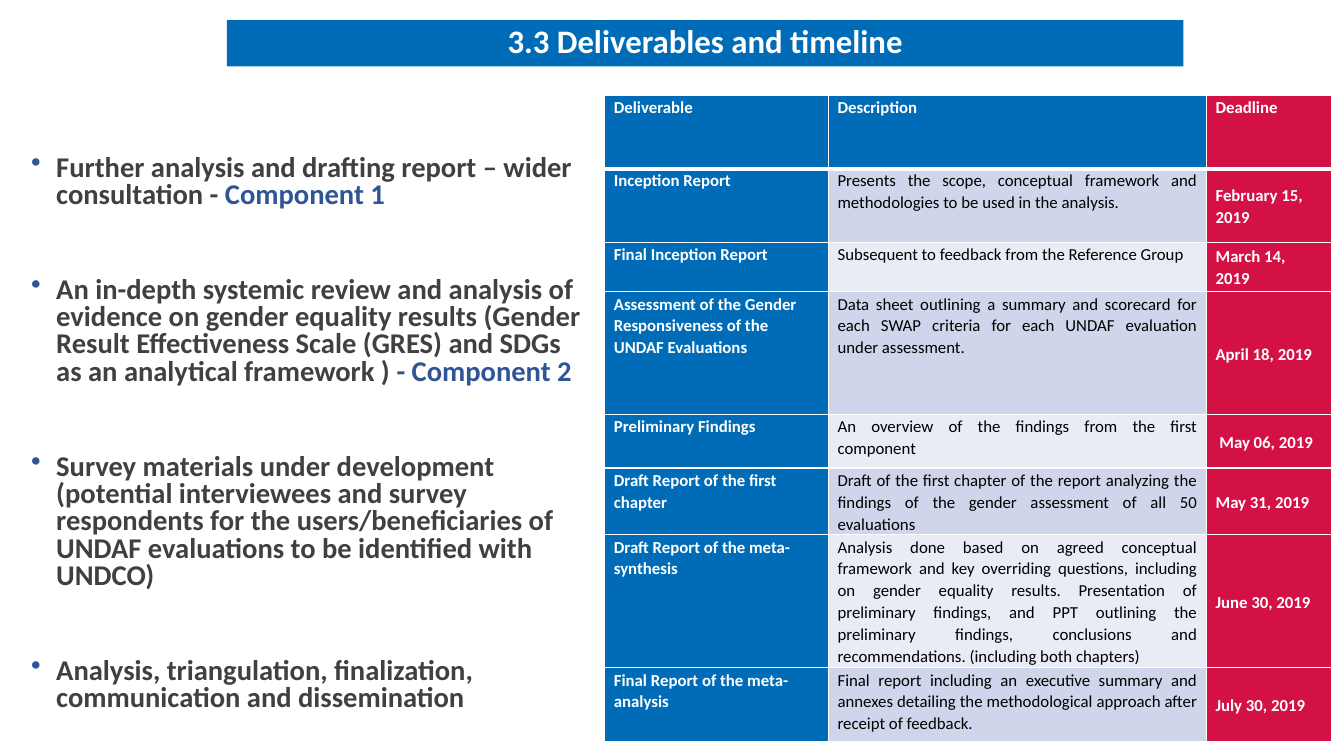
"""Build the deliverables and timeline slide."""
from dataclasses import dataclass

from lxml import etree
from pptx import Presentation
from pptx import util as u
from pptx.dml.color import RGBColor
from pptx.enum import shapes, text
from pptx.oxml import ns

FONT = "Calibri"
COLORS = {
    "blue": "006CB7", "red": "D31145", "accent": "2F5597", "gray": "404040",
    "white": "FFFFFF", "black": "000000", "band_dark": "CFD5EA", "band_light": "E9EBF5",
}
COL_WIDTHS = (159.8, 270, 89.3)


@dataclass
class Deliverable:
    name: str
    description: str
    deadline: str
    height: float


@dataclass
class Step:
    label: str
    component: str = ""


HEADER = Deliverable("Deliverable", "Description", "Deadline", 52.6)
DELIVERABLES = [
    Deliverable("Inception Report",
                "Presents the scope, conceptual framework and methodologies to be used in the analysis.",
                "February 15, 2019", 52.6),
    Deliverable("Final Inception Report", "Subsequent to feedback from the Reference Group",
                "March 14, 2019", 35.3),
    Deliverable("Assessment of the Gender Responsiveness of the UNDAF Evaluations",
                "Data sheet outlining a summary and scorecard for each SWAP criteria for each "
                "UNDAF evaluation under assessment.",
                "April 18, 2019", 87.8),
    Deliverable("Preliminary Findings", "An overview of the findings from the first component",
                " May 06, 2019", 38.2),
    Deliverable("Draft Report of the first chapter",
                "Draft of the first chapter of the report analyzing the findings of the gender "
                "assessment of all 50 evaluations",
                "May 31, 2019", 47.5),
    Deliverable("Draft Report of the meta-synthesis",
                "Analysis done based on agreed conceptual framework and key overriding questions, "
                "including on gender equality results. Presentation of preliminary findings, and PPT "
                "outlining the preliminary findings, conclusions and recommendations. "
                "(including both chapters)",
                "June 30, 2019", 95),
    Deliverable("Final Report of the meta-analysis",
                "Final report including an executive summary and annexes detailing the "
                "methodological approach after receipt of feedback.",
                "July 30, 2019", 52.6),
]
STEPS = [
    Step("Further analysis and drafting report – wider consultation - ", "Component 1"),
    Step("An in-depth systemic review and analysis of evidence on gender equality results "
         "(Gender Result Effectiveness Scale (GRES) and SDGs as an analytical framework ) ",
         "- Component 2"),
    Step("Survey materials under development (potential interviewees and survey respondents for "
         "the users/beneficiaries of UNDAF evaluations to be identified with UNDCO)"),
    Step("Analysis, triangulation, finalization, communication and dissemination"),
]


def rgb(name: str) -> RGBColor:
    return RGBColor.from_string(COLORS[name])


def add_text(p, content: str, *, size: float, color: str = "white", bold: bool = True,
             align=None, spacing: float = 1.0) -> None:
    p.alignment, p.line_spacing = align, spacing
    r = p.add_run()
    r.text = content
    r.font.name, r.font.size, r.font.bold = FONT, u.Pt(size), bold
    r.font.color.rgb = rgb(color)


def set_borders(cell, top: float, bottom: float) -> None:
    tcPr = cell._tc.get_or_add_tcPr()
    for i, (side, width) in enumerate((("L", 1), ("R", 1), ("T", top), ("B", bottom))):
        ln = etree.Element(ns.qn(f"a:ln{side}"), w=str(int(u.Pt(width))))
        fill = etree.SubElement(ln, ns.qn("a:solidFill"))
        etree.SubElement(fill, ns.qn("a:srgbClr"), val=COLORS["white"])
        tcPr.insert(i, ln)


def set_bullet(p) -> None:
    pPr = p._p.get_or_add_pPr()
    pPr.set("marL", str(int(u.Pt(18))))
    pPr.set("indent", str(int(u.Pt(-18))))
    color = etree.SubElement(pPr, ns.qn("a:buClr"))
    etree.SubElement(color, ns.qn("a:srgbClr"), val=COLORS["accent"])
    etree.SubElement(pPr, ns.qn("a:buChar"), char="•")


def add_title(s) -> None:
    sp = s.shapes.add_shape(shapes.MSO_SHAPE.RECTANGLE,
                            u.Pt(162), u.Pt(14.4), u.Pt(683.3), u.Pt(33.1))
    sp.shadow.inherit = False
    sp.fill.solid()
    sp.fill.fore_color.rgb = rgb("blue")
    sp.line.fill.background()
    tf = sp.text_frame
    tf.word_wrap = True
    tf.vertical_anchor = text.MSO_ANCHOR.MIDDLE
    add_text(tf.paragraphs[0], "3.3 Deliverables and timeline", size=23.4,
             align=text.PP_ALIGN.CENTER, spacing=0.9)


def add_steps(s) -> None:
    tf = s.shapes.add_textbox(u.Pt(15.1), u.Pt(107.3), u.Pt(410.4), u.Pt(452.9)).text_frame
    tf.word_wrap = True
    for i, step in enumerate(STEPS):
        p = tf.add_paragraph() if i else tf.paragraphs[0]
        set_bullet(p)
        p.space_before, p.space_after = u.Pt(12 if i else 0), u.Pt(36)
        add_text(p, step.label, size=20.4, color="gray", spacing=0.8)
        if step.component:
            add_text(p, step.component, size=20.4, color="accent", spacing=0.8)


def add_timeline(s) -> None:
    rows = [HEADER, *DELIVERABLES]
    frame = s.shapes.add_table(len(rows), len(COL_WIDTHS), u.Pt(432), u.Pt(67.9),
                               u.Pt(sum(COL_WIDTHS)), u.Pt(sum(row.height for row in rows)))
    table = frame.table
    for col, width in zip(table.columns, COL_WIDTHS):
        col.width = u.Pt(width)
    for i, row in enumerate(rows):
        table.rows[i].height = u.Pt(row.height)
        band = "band_dark" if i % 2 else "band_light"
        fills = ("blue", band if i else "blue", "red")
        for j, content in enumerate((row.name, row.description, row.deadline)):
            cell = table.cell(i, j)
            cell.margin_left = cell.margin_right = u.Pt(6.5)
            cell.margin_top, cell.margin_bottom = u.Pt(0.7), u.Pt(0)
            cell.fill.solid()
            cell.fill.fore_color.rgb = rgb(fills[j])
            set_borders(cell, top=3 if i == 1 else 1, bottom=1 if i else 3)
            if i and j == 2:
                cell.vertical_anchor = text.MSO_ANCHOR.MIDDLE
            body = i > 0 and j == 1
            add_text(cell.text_frame.paragraphs[0], content, size=12, bold=not body,
                     color="black" if body else "white", spacing=1.07,
                     align=text.PP_ALIGN.JUSTIFY if body else None)


def main() -> None:
    prs = Presentation()
    prs.slide_width, prs.slide_height = u.Pt(960), u.Pt(540)
    s = prs.slides.add_slide(prs.slide_layouts[6])
    add_timeline(s)
    add_title(s)
    add_steps(s)
    prs.save("out.pptx")


if __name__ == "__main__":
    main()
